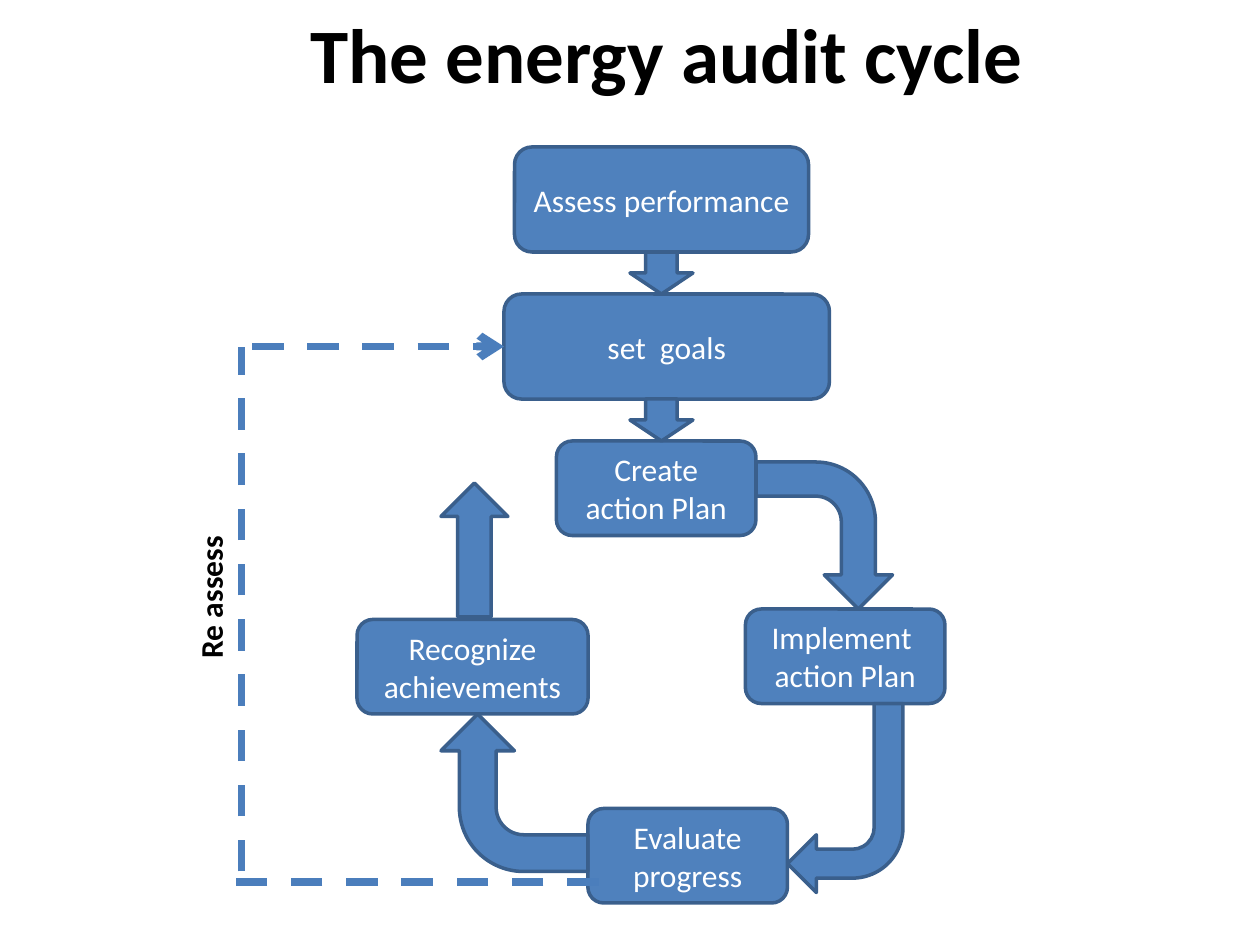
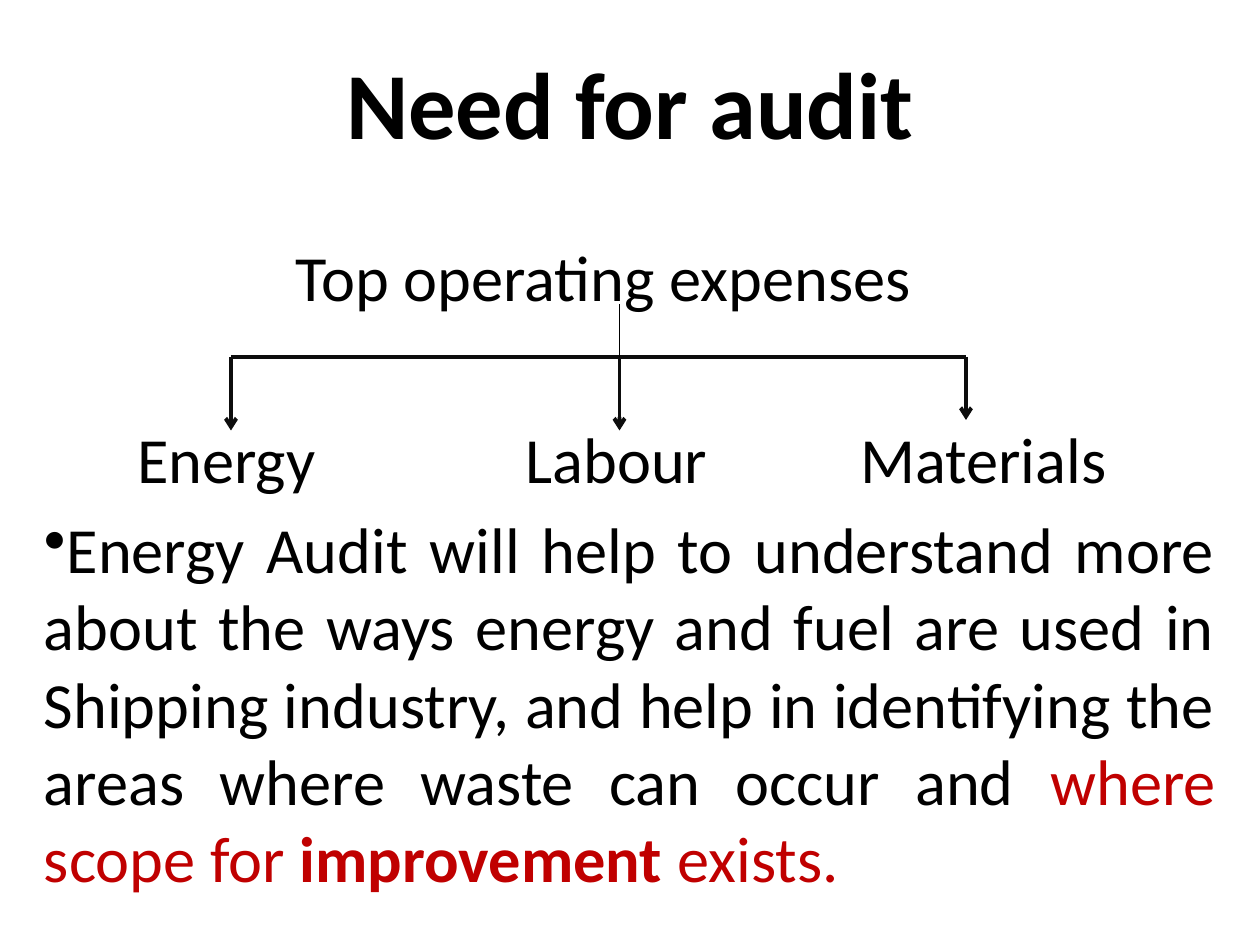
from collections import namedtuple

from pptx import Presentation
from pptx.dml.color import RGBColor
from pptx.enum.dml import MSO_LINE
from pptx.enum.shapes import MSO_CONNECTOR, MSO_SHAPE
from pptx.enum.text import MSO_ANCHOR, PP_ALIGN
from pptx.oxml.ns import qn
from pptx.util import Emu, Pt
from lxml.etree import SubElement

PX = 9525
FONT = "Calibri"
BLACK = RGBColor(0x00, 0x00, 0x00)
WHITE = RGBColor(0xFF, 0xFF, 0xFF)
BLUE = RGBColor(0x4F, 0x81, 0xBD)
EDGE = RGBColor(0x3A, 0x5F, 0x8C)
DASH_BLUE = RGBColor(0x4B, 0x7E, 0xBC)
INK = RGBColor(0x0D, 0x0D, 0x0D)
RED = RGBColor(0xC0, 0x00, 0x00)

BODY_SIZE = 36.8
BODY_GAP = 7.4
BRANCH_GAP = 59.7

Box = namedtuple("Box", "left top width height")


def inside(box, left, top, width, height):
    """Return a box given relative to the corner of another box."""
    return Box(box.left + left, box.top + top, width, height)


def emu(box):
    """Return the four lengths of a box in EMU."""
    return [Emu(length * PX) for length in box]


def style_font(font, size, color=BLACK, bold=False):
    """Set the shared typeface with a size, colour and weight."""
    font.name = FONT
    font.size = Pt(size)
    font.color.rgb = color
    font.bold = bold


def add_text_box(page, box):
    """Add an empty wrapping text box."""
    shape = page.shapes.add_textbox(*emu(box))
    shape.text_frame.word_wrap = True
    return shape


def add_label(page, box, text, size, align=PP_ALIGN.CENTER, anchor=MSO_ANCHOR.TOP):
    """Add one bold black paragraph."""
    shape = add_text_box(page, box)
    shape.text_frame.vertical_anchor = anchor
    para = shape.text_frame.paragraphs[0]
    para.text = text
    para.alignment = align
    style_font(para.font, size, bold=True)
    return shape


def add_block(page, kind, box, rotation=0):
    """Add a blue preset shape with a dark edge."""
    shape = page.shapes.add_shape(kind, *emu(box))
    shape.shadow.inherit = False
    shape.rotation = rotation
    shape.fill.solid()
    shape.fill.fore_color.rgb = BLUE
    shape.line.color.rgb = EDGE
    shape.line.width = Pt(2)
    return shape


def add_line(page, box, start, end, color, width, dashed=False, arrow=False):
    """Draw a straight line between two points relative to a box."""
    points = [Emu((corner + offset) * PX)
              for point in (start, end)
              for corner, offset in zip((box.left, box.top), point)]
    connector = page.shapes.add_connector(MSO_CONNECTOR.STRAIGHT, *points)
    line = connector.line
    line.color.rgb = color
    line.width = Pt(width)
    if dashed:
        line.dash_style = MSO_LINE.DASH
    properties = connector._element.spPr
    if arrow:
        SubElement(properties.find(qn("a:ln")), qn("a:tailEnd"), type="arrow")
    SubElement(properties, qn("a:effectLst"))


def draw_cycle(page, box):
    """Place the step boxes and the arrows that join them."""
    steps = [
        ("Assess performance", 120, 0, 224, 80),
        ("set  goals", 112, 112, 248, 80),
        ("Create action Plan", 152, 224, 152, 72),
        ("Implement  action Plan", 296, 352, 152, 72),
        ("Evaluate progress", 176, 504, 152, 72),
        ("Recognize achievements", 0, 360, 176, 72),
    ]
    arrows = [
        (MSO_SHAPE.DOWN_ARROW, 0, 208, 80, 48, 32),
        (MSO_SHAPE.DOWN_ARROW, 0, 208, 192, 48, 32),
        (MSO_SHAPE.BENT_ARROW, 90, 300, 244, 112, 104),
        (MSO_SHAPE.BENT_ARROW, 180, 328, 424, 88, 144),
        (MSO_SHAPE.BENT_ARROW, 270, 60, 436, 120, 112),
        (MSO_SHAPE.UP_ARROW, 0, 64, 256, 51, 102),
    ]
    for text, *place in steps:
        step = add_block(page, MSO_SHAPE.ROUNDED_RECTANGLE, inside(box, *place))
        step.text_frame.word_wrap = True
        step.text_frame.vertical_anchor = MSO_ANCHOR.MIDDLE
        para = step.text_frame.paragraphs[0]
        para.text = text
        para.alignment = PP_ALIGN.CENTER
        style_font(para.font, 18, WHITE)
    for kind, rotation, *place in arrows:
        add_block(page, kind, inside(box, *place), rotation)


def draw_feedback(page, box):
    """Draw the dashed way back to the goals with its upright label."""
    bottom = box.height
    routes = [
        ((box.width, bottom), (84, bottom), False),
        ((92, bottom - 8), (92, 0), False),
        ((100, 0), (292, 0), True),
    ]
    for start, end, arrow in routes:
        add_line(page, box, start, end, DASH_BLUE, 4.5, dashed=True, arrow=arrow)
    label = add_label(page, inside(box, 0, 160, 136, 38), "Re assess", 18, PP_ALIGN.LEFT)
    label.rotation = 270


def add_tabbed(para, words, stops):
    """Write each word at its own tab stop."""
    para.text = "".join("\t" + word for word in words)
    tabs = SubElement(para._p.get_or_add_pPr(), qn("a:tabLst"))
    for stop in stops:
        SubElement(tabs, qn("a:tab"), pos=str(stop * PX), algn="l")
    style_font(para.font, BODY_SIZE)


def write_expenses(page, box):
    """Write the expense heading, its three branches and the conclusion."""
    frame = add_text_box(page, box).text_frame
    add_tabbed(frame.paragraphs[0], ["Top operating expenses"], [192])

    branches = frame.add_paragraph()
    add_tabbed(branches, ["Energy", "Labour", "Materials"], [71, 367, 622])
    branches.space_before = Pt(BRANCH_GAP)

    para = frame.add_paragraph()
    properties = para._p.get_or_add_pPr()
    properties.set("marL", "0")
    properties.set("indent", "0")
    SubElement(properties, qn("a:buChar"), char="•")
    para.alignment = PP_ALIGN.JUSTIFY
    para.space_before = Pt(BODY_GAP)
    pieces = [
        ("Energy Audit will help to understand more about the ways energy and fuel "
         "are used in Shipping industry, and help in identifying the areas where "
         "waste can occur and ", BLACK, False),
        ("where scope for ", RED, False),
        ("improvement", RED, True),
        (" exists.", RED, False),
    ]
    for text, color, bold in pieces:
        span = para.add_run()
        span.text = text
        style_font(span.font, BODY_SIZE, color, bold)


def draw_branches(page, box):
    """Draw the tree of lines from the heading to the branches."""
    fork, middle = 40, 296
    for across, down in ((0, 96), (middle, 96), (box.width, 88)):
        add_line(page, box, (across, fork), (across, down), INK, 2.25, arrow=True)
    add_line(page, box, (0, fork), (box.width, fork), INK, 2.25)
    add_line(page, box, (middle, 0), (middle, fork), BLACK, 0.75)


def build_cycle_page(page):
    """Build the audit cycle slide."""
    draw_cycle(page, Box(272, 112, 448, 576))
    draw_feedback(page, Box(92, 264, 364, 408))
    add_label(page, Box(120, 0, 776, 80), "The energy audit cycle", 44)


def build_need_page(page):
    """Build the slide on the need for an audit."""
    add_label(page, Box(72, 0, 816, 155), "Need for audit", 54, anchor=MSO_ANCHOR.MIDDLE)
    write_expenses(page, Box(24, 176, 912, 488))
    draw_branches(page, Box(176, 232, 560, 96))


def main():
    """Create the deck and save it."""
    deck = Presentation()
    deck.slide_width, deck.slide_height = Emu(960 * PX), Emu(720 * PX)
    for build_page in (build_cycle_page, build_need_page):
        build_page(deck.slides.add_slide(deck.slide_layouts[6]))
    deck.save("out.pptx")


if __name__ == "__main__":
    main()
